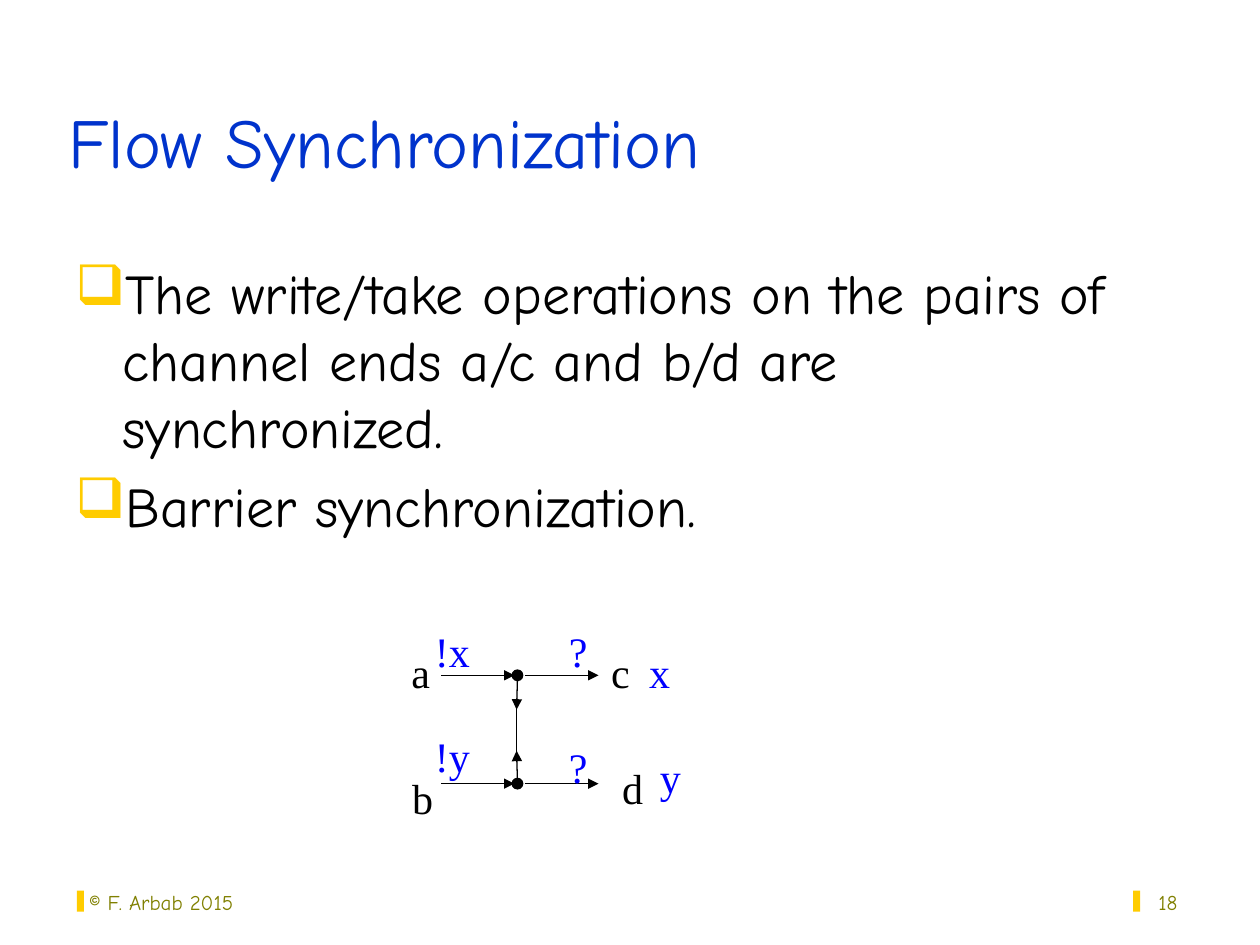
from dataclasses import dataclass

from lxml.etree import SubElement
from pptx import Presentation
from pptx.dml.color import RGBColor
from pptx.enum.shapes import MSO_CONNECTOR, MSO_SHAPE
from pptx.enum.text import MSO_ANCHOR, MSO_AUTO_SIZE, PP_ALIGN
from pptx.oxml.ns import qn
from pptx.util import Pt


@dataclass(frozen=True)
class Theme:
    title: str = "0033CC"
    ink: str = "000000"
    data: str = "0000FF"
    accent: str = "FFCC00"
    footer: str = "808000"
    sans: str = "Comic Neue"
    serif: str = "Times New Roman"
    title_size: float = 40
    body_size: float = 32
    label_size: float = 24
    footer_size: float = 12
    line_width: float = 0.75


@dataclass(frozen=True)
class Label:
    text: str
    x: float
    y: float
    w: float
    color: str


@dataclass(frozen=True)
class Line:
    x1: float
    y1: float
    x2: float
    y2: float
    arrow: bool = True


T = Theme()

TOP, BOTTOM = 385.9, 447.8
NODE_X, NODE_SIZE = 295.7, 6

LABELS = [
    Label("a", 228, 366, 25, T.ink),
    Label("b", 228, 438, 27, T.ink),
    Label("c", 342, 366, 25, T.ink),
    Label("d", 348, 432, 27, T.ink),
    Label("!x", 241, 354, 35, T.data),
    Label("!y", 241, 414, 35, T.data),
    Label("?", 318, 354, 25, T.data),
    Label("?", 318, 420, 25, T.data),
    Label("x", 363.5, 366, 27, T.data),
    Label("y", 369.5, 426, 27, T.data),
]

CHANNELS = [Line(x, y, x + 42, y) for y in (TOP, BOTTOM) for x in (252, 300)]
BARRIER = [
    Line(NODE_X, BOTTOM - 1.5, 295.2, 429),
    Line(NODE_X, TOP + 2.2, 295.2, 405.5),
    Line(295.2, 401, 295.2, 435, arrow=False),
]


def add_text(s, paragraphs: list[str], x: float, y: float, w: float, h: float,
             font: str, size: float, color: str, align=PP_ALIGN.LEFT,
             anchor=MSO_ANCHOR.TOP, wrap: bool = True):
    tf = s.shapes.add_textbox(Pt(x), Pt(y), Pt(w), Pt(h)).text_frame
    tf.word_wrap = wrap
    tf.auto_size = MSO_AUTO_SIZE.NONE if wrap else MSO_AUTO_SIZE.SHAPE_TO_FIT_TEXT
    tf.vertical_anchor = anchor
    tf.text = "\n".join(paragraphs)
    for p in tf.paragraphs:
        p.alignment = align
        for r in p.runs:
            r.font.name = font
            r.font.size = Pt(size)
            r.font.color.rgb = RGBColor.from_string(color)
    return tf


def add_bullet(p) -> None:
    pPr = p._p.get_or_add_pPr()
    pPr.set("marL", str(Pt(27)))
    pPr.set("indent", str(-Pt(27)))
    color = SubElement(pPr, qn("a:buClr"))
    SubElement(color, qn("a:srgbClr"), val=T.accent)
    SubElement(pPr, qn("a:buChar"), char="❑")


def add_line(s, line: Line) -> None:
    c = s.shapes.add_connector(MSO_CONNECTOR.STRAIGHT, Pt(line.x1), Pt(line.y1),
                               Pt(line.x2), Pt(line.y2))
    c.line.color.rgb = RGBColor.from_string(T.ink)
    c.line.width = Pt(T.line_width)
    if line.arrow:
        SubElement(c.line._get_or_add_ln(), qn("a:tailEnd"), type="triangle")
    SubElement(c._element.spPr, qn("a:effectLst"))


def add_solid(s, kind: MSO_SHAPE, x: float, y: float, w: float, h: float, color: str):
    sp = s.shapes.add_shape(kind, Pt(x), Pt(y), Pt(w), Pt(h))
    sp.shadow.inherit = False
    sp.fill.solid()
    sp.fill.fore_color.rgb = RGBColor.from_string(color)
    sp.line.fill.background()
    return sp


def add_node(s, x: float, y: float) -> None:
    r = NODE_SIZE / 2
    sp = add_solid(s, MSO_SHAPE.OVAL, x - r, y - r, NODE_SIZE, NODE_SIZE, T.ink)
    sp.line.color.rgb = RGBColor.from_string(T.ink)
    sp.line.width = Pt(T.line_width)


def add_footer(s, text: str, x: float, bar_x: float, align) -> None:
    add_solid(s, MSO_SHAPE.RECTANGLE, bar_x, 509, 4, 12, T.accent)
    tf = add_text(s, [text], x, 490.3, 150, 36, T.sans, T.footer_size, T.footer,
                  align, MSO_ANCHOR.BOTTOM)
    if align == PP_ALIGN.LEFT:
        tf.margin_left = Pt(17)


def main() -> None:
    prs = Presentation()
    prs.slide_width, prs.slide_height = Pt(720), Pt(540)
    s = prs.slides.add_slide(prs.slide_layouts[6])

    add_text(s, ["Flow Synchronization"], 32, 18, 612, 90, T.sans, T.title_size,
             T.title, anchor=MSO_ANCHOR.BOTTOM)
    body = add_text(s, ["The write/take operations on the pairs of channel ends "
                        "a/c and b/d are synchronized.",
                        "Barrier synchronization."],
                    36, 144, 644, 328, T.sans, T.body_size, T.ink)
    for p in body.paragraphs:
        add_bullet(p)
    body.paragraphs[1].space_before = Pt(T.body_size * 0.2)

    for line in CHANNELS + BARRIER:
        add_line(s, line)
    for label in LABELS:
        add_text(s, [label.text], label.x, label.y, label.w, 36, T.serif,
                 T.label_size, label.color, PP_ALIGN.CENTER, wrap=False)
    for y in (TOP, BOTTOM):
        add_node(s, NODE_X, y)

    add_footer(s, "© F. Arbab 2015", 34, 44, PP_ALIGN.LEFT)
    add_footer(s, "18", 530, 647.5, PP_ALIGN.RIGHT)
    prs.save("out.pptx")


if __name__ == "__main__":
    main()
